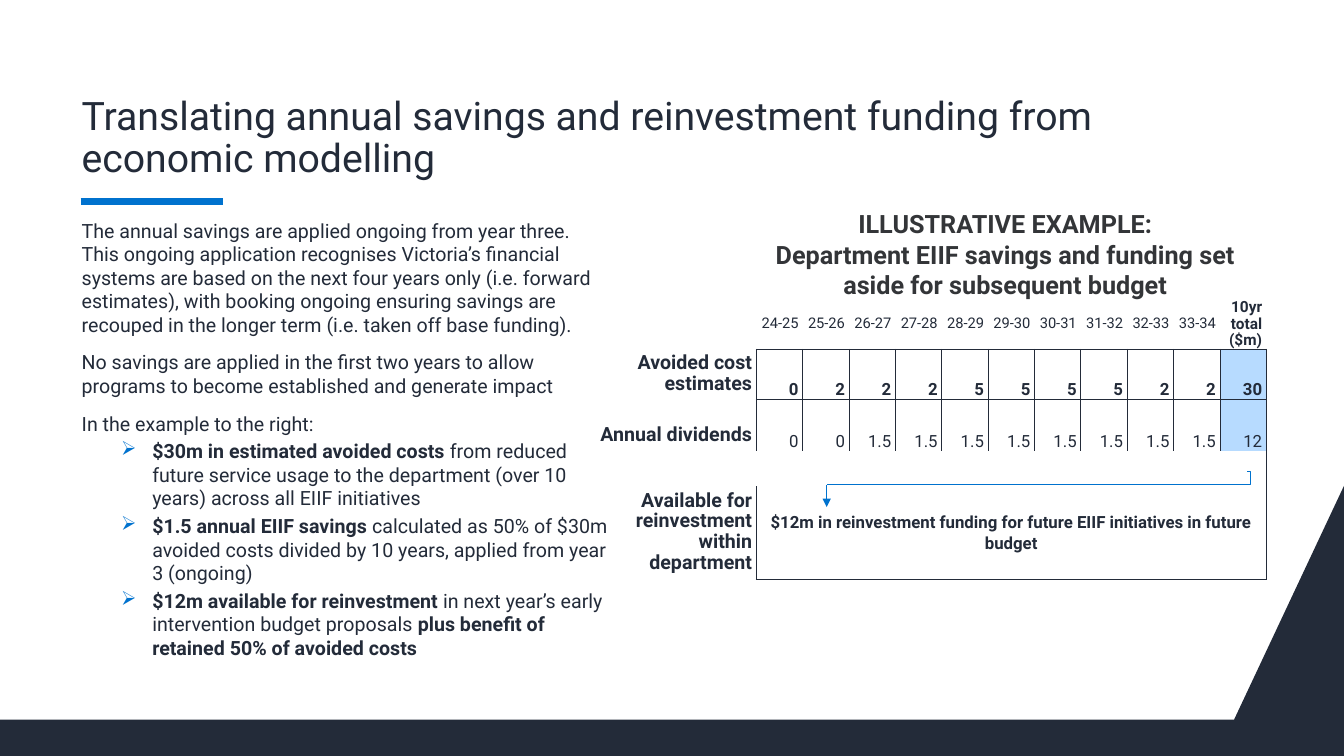
from dataclasses import dataclass

from lxml import etree
from pptx import Presentation
from pptx.dml.color import RGBColor
from pptx.enum.shapes import MSO_CONNECTOR
from pptx.enum.text import MSO_ANCHOR, PP_ALIGN
from pptx.oxml.ns import qn
from pptx.util import Inches, Pt

NAVY = RGBColor(0x23, 0x2B, 0x39)
BLUE = RGBColor(0x00, 0x72, 0xCE)
PALE_BLUE = RGBColor(0xB7, 0xDB, 0xFF)
CHARCOAL = RGBColor(0x33, 0x35, 0x38)
FONT = "Roboto"

LEFT, CENTER, RIGHT = PP_ALIGN.LEFT, PP_ALIGN.CENTER, PP_ALIGN.RIGHT
TOP, MIDDLE, BOTTOM = MSO_ANCHOR.TOP, MSO_ANCHOR.MIDDLE, MSO_ANCHOR.BOTTOM
STRAIGHT, ELBOW = MSO_CONNECTOR.STRAIGHT, MSO_CONNECTOR.ELBOW


@dataclass
class Span:
    text: str
    bold: bool = False


@dataclass
class Para:
    spans: list[Span]
    bullet: bool = False


@dataclass
class TableRow:
    label: str
    values: list[str]
    height: float
    size: float = 12
    bold: bool = False
    anchor: MSO_ANCHOR = BOTTOM
    label_top: float = 0.04
    borders: str = "LR"
    total_fill: RGBColor | None = PALE_BLUE


BODY = [
    Para([Span("The annual savings are applied ongoing from year three. This ongoing application "
               "recognises Victoria’s financial systems are based on the next four years only "
               "(i.e. forward estimates), with booking ongoing ensuring savings are recouped in "
               "the longer term (i.e. taken off base funding).")]),
    Para([Span("No savings are applied in the first two years to allow programs to become "
               "established and generate impact")]),
    Para([Span("In the example to the right:")]),
    Para([Span("$30m in estimated avoided costs", True),
          Span(" from reduced future service usage to the department (over 10 years) across all "
               "EIIF initiatives")], bullet=True),
    Para([Span("$1.5 annual EIIF savings ", True),
          Span("calculated as 50% of $30m avoided costs divided by 10 years, applied from year 3 "
               "(ongoing)")], bullet=True),
    Para([Span("$12m available for reinvestment ", True),
          Span("in next year’s early intervention budget proposals "),
          Span("plus benefit of retained 50% of avoided costs", True)], bullet=True),
]
YEARS = [f"{year}-{year + 1}" for year in range(24, 34)]
ROWS = [
    TableRow("", YEARS + ["10yr total ($m)"], 0.48, size=10.5, anchor=MIDDLE,
             borders="B", total_fill=None),
    TableRow("Avoided cost estimates", "0 2 2 2 5 5 5 5 2 2 30".split(), 0.5, bold=True,
             borders="LRTB"),
    TableRow("Annual dividends", ["0"] * 2 + ["1.5"] * 8 + ["12"], 0.51, label_top=0.25,
             borders="LRT"),
    TableRow("", [], 0.35),
    TableRow("Available for reinvestment within department",
             ["$12m in reinvestment funding for future EIIF initiatives in future budget"],
             0.91, bold=True, anchor=MIDDLE, borders="LRB", total_fill=None),
]


def add_spans(para, spans: list[Span], *, size: float, color: RGBColor = NAVY,
              align: PP_ALIGN = LEFT, spacing: float = 1.0, before: float = 0) -> None:
    para.alignment = align
    para.line_spacing = spacing
    para.space_before = Pt(before)
    for span in spans:
        run = para.add_run()
        run.text = span.text
        run.font.name = FONT
        run.font.size = Pt(size)
        run.font.bold = span.bold
        run.font.color.rgb = color


def set_margins(item, left: float, top: float, right: float, bottom: float) -> None:
    item.margin_left, item.margin_top = Inches(left), Inches(top)
    item.margin_right, item.margin_bottom = Inches(right), Inches(bottom)


def add_bullet(para) -> None:
    properties = para._p.get_or_add_pPr()
    properties.set("marL", str(Inches(0.7)))
    properties.set("indent", str(Inches(-0.31)))
    color = etree.SubElement(properties, qn("a:buClr"))
    etree.SubElement(color, qn("a:srgbClr"), val=str(BLUE))
    etree.SubElement(properties, qn("a:buChar"), char="➢")


def set_borders(cell, sides: str) -> None:
    properties = cell._tc.get_or_add_tcPr()
    for side in "LRTB":
        line = etree.SubElement(properties, qn(f"a:ln{side}"), w=str(Pt(0.5)))
        if side in sides:
            fill = etree.SubElement(line, qn("a:solidFill"))
            etree.SubElement(fill, qn("a:srgbClr"), val=str(NAVY))
        else:
            etree.SubElement(line, qn("a:noFill"))


def add_line(page, kind: MSO_CONNECTOR, start: tuple[float, float], end: tuple[float, float],
             width: float):
    line = page.shapes.add_connector(kind, *map(Inches, start + end))
    line.line.color.rgb = BLUE
    line.line.width = Pt(width)
    etree.SubElement(line._element.spPr, qn("a:effectLst"))
    return line


def add_savings_table(page) -> None:
    columns = 12
    frame = page.shapes.add_table(len(ROWS), columns, Inches(5.94), Inches(2.97),
                                  Inches(6.62), Inches(sum(row.height for row in ROWS)))
    table = frame.table
    table.first_row = table.horz_banding = False
    for index, column in enumerate(table.columns):
        column.width = Inches(0.46 if index else 1.56)
    for row_index, row in enumerate(ROWS):
        table.rows[row_index].height = Inches(row.height)
        for index in range(columns):
            cell = table.cell(row_index, index)
            is_total = index == columns - 1
            if index == 0:
                borders = "R" if row.label else ""
            else:
                borders = row.borders if row.values else "R" if is_total else ""
            set_borders(cell, borders)
            if is_total and row.total_fill and row.values:
                cell.fill.solid()
                cell.fill.fore_color.rgb = row.total_fill
            else:
                cell.fill.background()
            set_margins(cell, 0, 0, 0, 0)
            para = cell.text_frame.paragraphs[0]
            if index == 0 and row.label:
                set_margins(cell, 0, row.label_top, 0.04, 0.04)
                cell.vertical_anchor = TOP
                add_spans(para, [Span(row.label, True)], size=14, align=RIGHT, spacing=0.9)
            elif 0 < index <= len(row.values):
                is_header = row_index == 0
                set_margins(cell, 0 if is_header else 0.04, 0, 0.04, 0)
                cell.vertical_anchor = row.anchor
                add_spans(para, [Span(row.values[index - 1], row.bold or is_header and is_total)],
                          size=11 if is_header and is_total else row.size,
                          align=CENTER if len(row.values) == 1 else RIGHT,
                          spacing=0.9 if is_header else 1.05)
                if not is_header:
                    para.space_after = Pt(3)
    # Merged rows: the gap and the reinvestment statement
    set_borders_source = table.cell(3, 0)
    set_borders_source._tc.get_or_add_tcPr().clear()
    set_borders(set_borders_source, "R")
    set_borders_source.fill.background()
    set_margins(set_borders_source, 0, 0, 0, 0)
    set_borders_source.merge(table.cell(3, columns - 1))
    table.cell(4, 1).merge(table.cell(4, columns - 1))


def main() -> None:
    deck = Presentation()
    deck.slide_width, deck.slide_height = Inches(13.33), Inches(7.5)
    page = deck.slides.add_slide(deck.slide_layouts[5])

    # Footer band with its rising corner
    outline = page.shapes.build_freeform(Inches(12.24), Inches(7.14))
    corners = [(0, 7.14), (0, 7.5), (13.33, 7.5), (13.33, 4.82)]
    outline.add_line_segments([(Inches(x), Inches(y)) for x, y in corners], close=True)
    band = outline.convert_to_shape()
    band.shadow.inherit = False
    band.fill.solid()
    band.fill.fore_color.rgb = NAVY
    band.line.fill.background()

    # Title and accent rule
    title = page.shapes.title
    title.left, title.top, title.width, title.height = map(Inches, (0.77, 0.72, 11.5, 1.13))
    set_margins(title.text_frame, 0.04, 0.05, 0.04, 0.05)
    title.text_frame.vertical_anchor = BOTTOM
    heading = "Translating annual savings and reinvestment funding from economic modelling"
    add_spans(title.text_frame.paragraphs[0], [Span(heading)], size=28, spacing=0.9)
    add_line(page, STRAIGHT, (0.8, 2), (2.21, 2), 4.5)

    # Explanation
    body = page.shapes.add_textbox(*map(Inches, (0.77, 2.12, 5.31, 4.99))).text_frame
    body.word_wrap = True
    set_margins(body, 0.04, 0.05, 0.04, 0.05)
    for index, item in enumerate(BODY):
        para = body.add_paragraph() if index else body.paragraphs[0]
        if item.bullet:
            add_bullet(para)
        add_spans(para, item.spans, size=14, before=0 if index == 0 else 3 if item.bullet else 10)

    # Worked example
    add_savings_table(page)
    caption = page.shapes.add_textbox(*map(Inches, (7.38, 2.02, 5.18, 1.01))).text_frame
    caption.word_wrap = True
    lines = ["ILLUSTRATIVE EXAMPLE:",
             "Department EIIF savings and funding set aside for subsequent budget"]
    for index, text in enumerate(lines):
        para = caption.add_paragraph() if index else caption.paragraphs[0]
        add_spans(para, [Span(text, True)], size=18, color=CHARCOAL, align=CENTER)

    # Arrow from the total to the reinvestment statement
    elbow = add_line(page, ELBOW, (12.37, 4.68), (8.2, 4.81), 0.5)
    guides = elbow._element.spPr.find(qn("a:prstGeom")).find(qn("a:avLst"))
    etree.SubElement(guides, qn("a:gd"), name="adj1", fmla="val -800")
    arrow = add_line(page, STRAIGHT, (8.2, 4.81), (8.2, 5.03), 0.5)
    etree.SubElement(arrow.line._get_or_add_ln(), qn("a:tailEnd"), type="triangle")

    deck.save("out.pptx")


if __name__ == "__main__":
    main()
